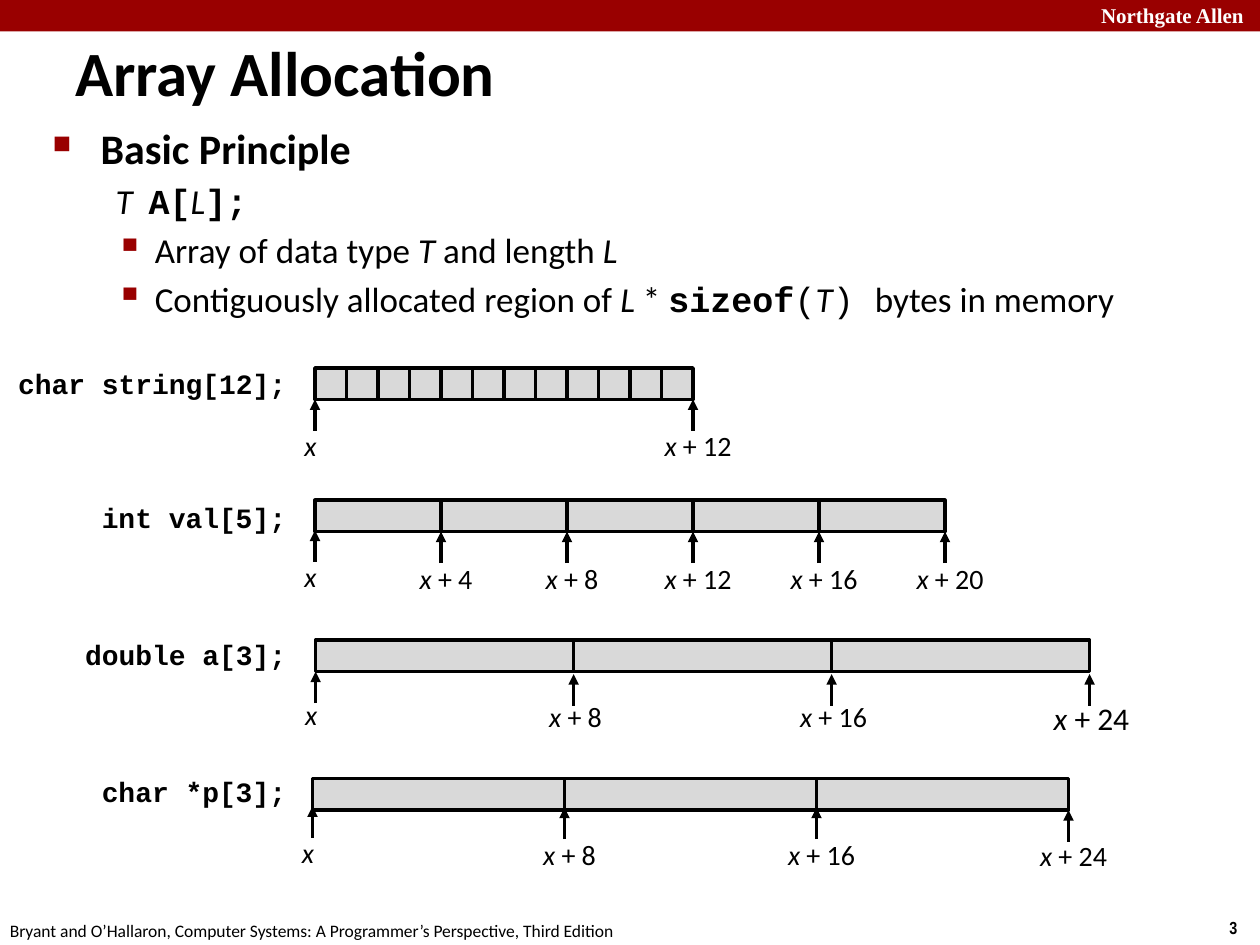
from collections import namedtuple
from dataclasses import dataclass

from lxml.etree import SubElement
from pptx import Presentation
from pptx.dml.color import RGBColor
from pptx.enum.shapes import MSO_CONNECTOR, MSO_SHAPE
from pptx.enum.text import MSO_ANCHOR, MSO_AUTO_SIZE, PP_ALIGN
from pptx.oxml.ns import qn
from pptx.util import Inches, Pt

# The slide is a grid of 40 columns by 30 rows of a quarter inch each
COLUMNS, ROWS, UNIT = 40, 30, Inches(0.25)
INSET = 0.4

BLACK = RGBColor(0x00, 0x00, 0x00)
WHITE = RGBColor(0xFF, 0xFF, 0xFF)
CRIMSON = RGBColor(0x99, 0x00, 0x00)
CELL_GREY = RGBColor(0xD9, 0xD9, 0xD9)
SANS, MONO = "Calibri", "Courier New"

Box = namedtuple("Box", "left top width height")
Mark = namedtuple("Mark", "cell tip label size", defaults=(16,))


@dataclass
class ArrayRow:
    """One array: its declaration, its cells and the addresses below them."""
    declaration: str
    declaration_rise: float
    box: Box
    count: int
    cell_bytes: int
    label_shift: float
    marks: list


def grid(*lengths):
    return [round(length * UNIT) for length in lengths]


def format_span(span, size, font=SANS, color=BLACK, bold=False, italic=False):
    span.font.size = Pt(size)
    span.font.name = font
    span.font.color.rgb = color
    span.font.bold = bold
    span.font.italic = italic


def add_spans(para, parts, size):
    """Each part is a text and its style letters: b bold, i italic, m mono."""
    for text, style in parts:
        span = para.add_run()
        span.text = text
        format_span(span, size, MONO if "m" in style else SANS,
                    bold="b" in style, italic="i" in style)


def add_text(shapes, box, text="", align=PP_ALIGN.LEFT, wrap=True, **style):
    frame = shapes.add_textbox(*grid(*box)).text_frame
    frame.word_wrap = wrap
    frame.auto_size = MSO_AUTO_SIZE.NONE if wrap else MSO_AUTO_SIZE.SHAPE_TO_FIT_TEXT
    para = frame.paragraphs[0]
    para.alignment = align
    if text:
        para.text = text
        format_span(para.runs[0], **style)
    return frame


def add_block(shapes, box, fill, outline=None):
    block = shapes.add_shape(MSO_SHAPE.RECTANGLE, *grid(*box))
    block.shadow.inherit = False
    block.fill.solid()
    block.fill.fore_color.rgb = fill
    if outline is None:
        block.line.fill.background()
    else:
        block.line.color.rgb = outline
        block.line.width = Pt(2)


def add_up_arrow(shapes, left, tip):
    arrow = shapes.add_connector(MSO_CONNECTOR.STRAIGHT,
                                 *grid(left, tip + 1, left, tip))
    arrow.line.color.rgb = BLACK
    arrow.line.width = Pt(2)
    SubElement(arrow.line._get_or_add_ln(), qn("a:tailEnd"), type="triangle")
    SubElement(arrow._element.spPr, qn("a:effectLst"))


def set_outline_level(para, margin, hang, bullet=None, bullet_size=100):
    """Hanging indent, space of 20% before, and an optional crimson bullet."""
    props = para._p.get_or_add_pPr()
    props.set("marL", str(Inches(margin)))
    props.set("indent", str(-Inches(hang)))
    before = SubElement(props, qn("a:spcBef"))
    SubElement(before, qn("a:spcPct"), val="20000")
    if bullet is None:
        SubElement(props, qn("a:buNone"))
        return
    color = SubElement(props, qn("a:buClr"))
    SubElement(color, qn("a:srgbClr"), val=str(CRIMSON))
    SubElement(props, qn("a:buSzPct"), val=str(bullet_size * 1000))
    SubElement(props, qn("a:buChar"), char=bullet)


def add_banner(shapes, box):
    add_block(shapes, box, CRIMSON)
    add_text(shapes, Box(box.width - 5.44, box.top - 0.12, 5.72, 1.2),
             "Northgate Allen", size=12, font="Times New Roman",
             color=WHITE, bold=True)


def add_footer(shapes, box):
    add_text(shapes, Box(box.left - 0.08, box.top, 20.32, box.height),
             "Bryant and O’Hallaron, Computer Systems: "
             "A Programmer’s Perspective, Third Edition", wrap=False, size=10)
    add_text(shapes, Box(box.width - 1.36, box.top - 0.08, 1.36, box.height),
             "3", wrap=False, size=10, font="Arial Narrow", bold=True)


def add_title(shapes, box):
    frame = add_text(shapes, box, "Array Allocation", size=36, bold=True)
    frame.vertical_anchor = MSO_ANCHOR.MIDDLE


def add_principle(shapes, box):
    square = {"bullet": "▪", "bullet_size": 110}
    outline = [
        (24, (0.38, 0.38), {"bullet": "■", "bullet_size": 60},
         [("Basic Principle", "b")]),
        (20, (0.81, 0.31), {},
         [("T  ", "i"), ("A[", "bm"), ("L", "i"), ("];", "bm")]),
        (20, (0.81, 0.31), square,
         [("Array of data type ", ""), ("T", "i"), (" and length ", ""), ("L", "i")]),
        (20, (0.81, 0.31), square,
         [("Contiguously allocated region of ", ""), ("L", "i"), (" * ", ""),
          ("sizeof", "bm"), ("(", "m"), ("T", "i"), (") ", "m"),
          ("bytes in memory", "")]),
    ]
    frame = add_text(shapes, box)
    for number, (size, indent, bullet, parts) in enumerate(outline):
        para = frame.add_paragraph() if number else frame.paragraphs[0]
        set_outline_level(para, *indent, **bullet)
        add_spans(para, parts, size)


def add_array(shapes, array):
    box = array.box
    # Declaration, right-aligned before the cells (mono letters are 0.6 em wide)
    width = 2 * INSET + len(array.declaration) * 16 * 0.6 / 18
    add_text(shapes, Box(9.48 - width, box.top - array.declaration_rise, width, 1.48),
             array.declaration, PP_ALIGN.RIGHT, False, size=16, font=MONO, bold=True)

    # Cells
    parts = shapes.add_group_shape().shapes
    cell_width = box.width / array.count
    for cell in range(array.count):
        add_block(parts, Box(box.left + cell * cell_width, box.top,
                             cell_width, box.height), CELL_GREY, BLACK)

    # Address arrows and labels
    for mark in array.marks:
        edge = box.left + mark.cell * cell_width
        add_up_arrow(parts, edge, box.top + mark.tip)
        width, shift = (4.32, array.label_shift) if mark.cell else (1.72, -0.14)
        frame = add_text(parts, Box(edge + shift - width / 2, box.top + mark.label,
                                    width, 1.48), align=PP_ALIGN.CENTER)
        address = [("x ", "i"), (f"+ {mark.cell * array.cell_bytes}", "")]
        add_spans(frame.paragraphs[0], address if mark.cell else [("x", "i")],
                  mark.size)


ARRAYS = [
    ArrayRow("char string[12];", 0.24, Box(10, 11.68, 12, 1), 12, 1, 0.16,
             [Mark(0, 1, 1.72), Mark(12, 1, 1.72)]),
    ArrayRow("int val[5];", 0.2, Box(10, 15.88, 20, 1), 5, 4, 0.16,
             [Mark(0, 0.96, 1.68)] + [Mark(cell, 1, 1.76) for cell in range(1, 6)]),
    ArrayRow("double a[3];", 0.28, Box(10.02, 20.32, 24.57, 1), 3, 8, 0.06,
             [Mark(0, 1, 1.64), Mark(1, 1.08, 1.68), Mark(2, 1.08, 1.68),
              Mark(3, 1.08, 1.68, 18)]),
    ArrayRow("char *p[3];", 0.32, Box(9.92, 24.72, 24, 1), 3, 8, 0.16,
             [Mark(0, 0.88, 1.6), Mark(1, 0.92, 1.68), Mark(2, 0.92, 1.68),
              Mark(3, 1, 1.72)]),
]


def main():
    deck = Presentation()
    deck.slide_width, deck.slide_height = grid(COLUMNS, ROWS)
    shapes = deck.slides.add_slide(deck.slide_layouts[6]).shapes
    add_banner(shapes, Box(0, 0, COLUMNS, 1))
    add_footer(shapes, Box(0, ROWS - 1, COLUMNS, 1.08))
    add_title(shapes, Box(2, 1, 26, 2.52))
    add_principle(shapes, Box(1.28, 3.68, 36.36, 7.08))
    for array in ARRAYS:
        add_array(shapes, array)
    deck.save("out.pptx")


if __name__ == "__main__":
    main()
